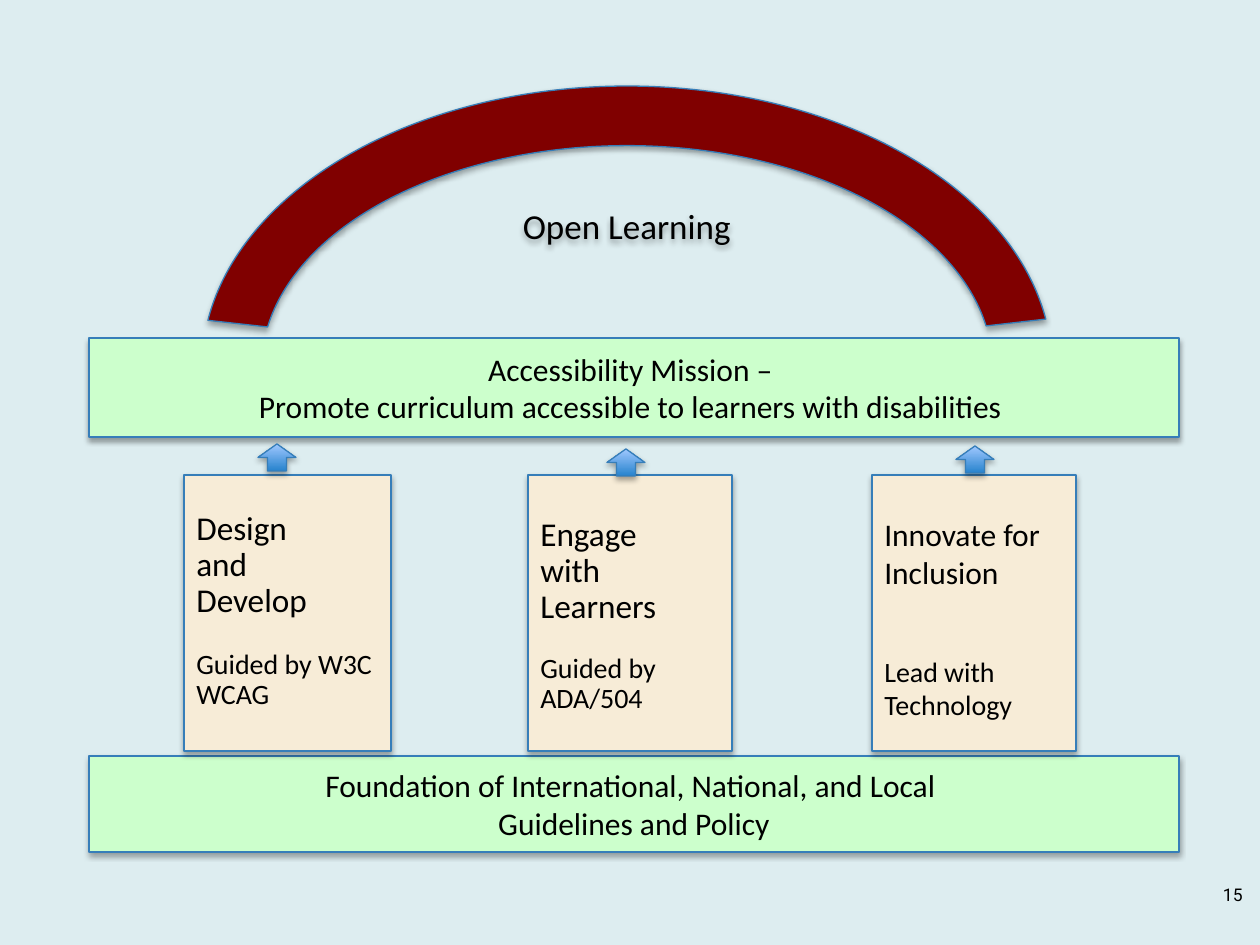
from lxml import etree
from pptx import Presentation
from pptx import util as u
from pptx.dml.color import RGBColor
from pptx.enum import shapes, text
from pptx.oxml import ns

PX = 914400 / 126
SKY = RGBColor(0xDD, 0xED, 0xF0)
MINT = RGBColor(0xCC, 0xFF, 0xCC)
SAND = RGBColor(0xF7, 0xEC, 0xD7)
MAROON = RGBColor(0x80, 0x00, 0x00)
EDGE = RGBColor(0x36, 0x7E, 0xB9)
DEEP = RGBColor(0x27, 0x83, 0xCD)
PALE = RGBColor(0xA0, 0xC8, 0xFF)
BLACK = RGBColor(0, 0, 0)
KIND = shapes.MSO_SHAPE
ALIGN = text.PP_ALIGN

deck = Presentation()
deck.slide_width, deck.slide_height = u.Inches(10), u.Inches(7.5)
slide = deck.slides.add_slide(deck.slide_layouts[6])
slide.background.fill.solid()
slide.background.fill.fore_color.rgb = SKY


def draw(kind, box, fill=None):
    """Add an outlined shape with a soft shadow; no fill means the blue gradient."""
    shape = slide.shapes.add_shape(kind, *[round(n * PX) for n in box])
    if fill:
        shape.fill.solid()
        shape.fill.fore_color.rgb = fill
    else:
        shape.fill.gradient()
        shape.fill.gradient_angle = 90
        for stop, tone in zip(shape.fill.gradient_stops, (DEEP, PALE)):
            stop.color.rgb = tone
    shape.line.color.rgb = EDGE
    shape.line.width = u.Pt(0.75)
    shape.shadow.inherit = False
    glow = etree.SubElement(shape.element.spPr.find(ns.qn("a:effectLst")),
                            ns.qn("a:outerShdw"), blurRad="40000", dist="23000",
                            dir="5400000", rotWithShape="0")
    tone = etree.SubElement(glow, ns.qn("a:srgbClr"), val="000000")
    etree.SubElement(tone, ns.qn("a:alpha"), val="35000")
    return shape


def write(shape, lines, align, pitch=1.0, font="Calibri"):
    """Fill a shape with lines of (words, size, space before)."""
    frame = shape.text_frame
    frame.word_wrap = True
    for i, (words, size, gap) in enumerate(lines):
        para = frame.add_paragraph() if i else frame.paragraphs[0]
        para.alignment = align
        para.line_spacing = pitch
        para.space_before = u.Pt(gap)
        run = para.add_run()
        run.text = words
        run.font.size = u.Pt(size)
        run.font.name = font
        run.font.color.rgb = BLACK


# Mission and foundation bars
bars = [
    (338, 99, ["Accessibility Mission – ",
               "Promote curriculum accessible to learners with disabilities "]),
    (756, 96, ["Foundation of International, National, and Local ",
               "Guidelines and Policy"]),
]
for top, high, lines in bars:
    bar = draw(KIND.RECTANGLE, (89, top, 1090, high), MINT)
    bar.text_frame.vertical_anchor = text.MSO_ANCHOR.MIDDLE
    write(bar, [(words, 18, 0) for words in lines], ALIGN.CENTER)

# Arch
arch = draw(KIND.BLOCK_ARC, (202, 86, 850, 562), MAROON)
for i, value in enumerate((111.815, 212.083, 0.106)):
    arch.adjustments[i] = value
arch.text_frame.vertical_anchor = text.MSO_ANCHOR.MIDDLE
arch.text_frame.margin_top = round(44 * PX)
write(arch, [("Open Learning", 20, 0)], ALIGN.CENTER)

# Pillars: width, top inset, line pitch, heading size, heading, gap, guide
pillars = [
    (207, 37, 0.9, 19, ["Design", "and", "Develop"], 17.5, "Guided by W3C WCAG"),
    (204, 43, 0.9, 19, ["Engage", "with", "Learners"], 16.5, "Guided by ADA/504"),
    (204, 40, 1.0, 18, ["Innovate for", "Inclusion"], 36.5, "Lead with Technology"),
]
for i, (wide, inset, pitch, size, heads, gap, guide) in enumerate(pillars):
    post = draw(KIND.RECTANGLE, (184 + 344 * i, 475, wide, 276), SAND)
    frame = post.text_frame
    frame.vertical_anchor = text.MSO_ANCHOR.TOP
    frame.margin_top = round(inset * PX)
    frame.margin_bottom = u.Inches(0.2)
    lines = [(words, size, 0) for words in heads] + [(guide, 16, gap)]
    write(post, lines, ALIGN.LEFT, pitch)

# Arrows from pillars to mission
for i, top in enumerate((444, 449, 446)):
    draw(KIND.UP_ARROW, (258 + 349 * i, top, 38, 27))

# Slide number
page = slide.shapes.add_textbox(*[round(n * PX) for n in (1179, 873, 76, 72)])
page.text_frame.margin_top = page.text_frame.margin_bottom = u.Inches(0.1)
write(page, [("15", 10, 0)], ALIGN.RIGHT, font="Roboto")

deck.save("out.pptx")
